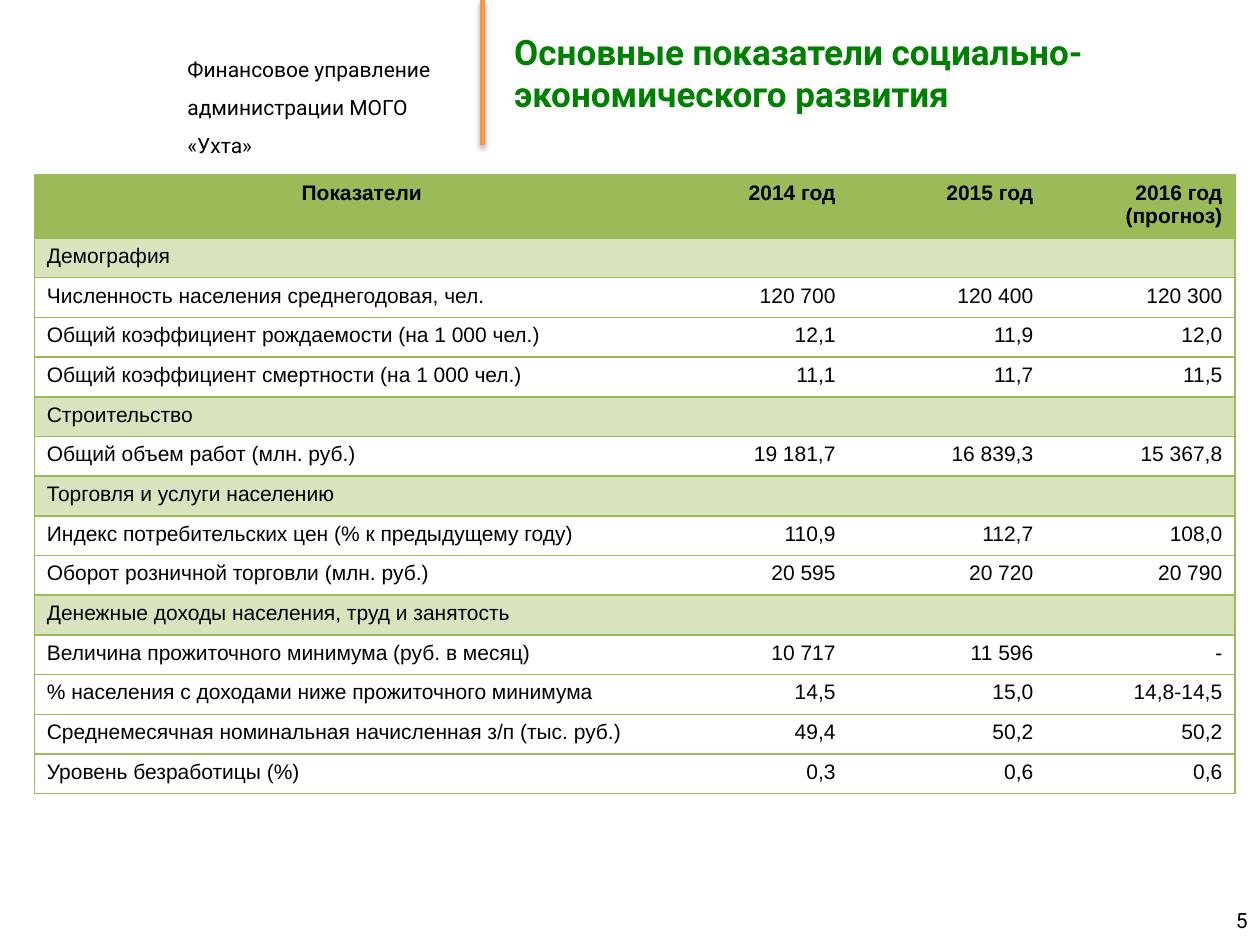
"""Slide with the main indicators of social and economic development."""
from lxml import etree
from pptx import Presentation
from pptx.dml.color import RGBColor
from pptx.enum.shapes import MSO_CONNECTOR
from pptx.enum.text import MSO_ANCHOR, PP_ALIGN
from pptx.oxml import parse_xml
from pptx.oxml.ns import qn
from pptx.util import Pt

LEFT, CENTER, RIGHT = PP_ALIGN.LEFT, PP_ALIGN.CENTER, PP_ALIGN.RIGHT
MIDDLE = MSO_ANCHOR.MIDDLE
STRAIGHT = MSO_CONNECTOR.STRAIGHT
NAMESPACE = "http://schemas.openxmlformats.org/drawingml/2006/main"
NO_STYLE = "{2D5ABB26-0587-4C30-8999-92F81FD0307C}"
GREEN, PALE_GREEN, WHITE = "9BBB59", "D7E4BD", "FFFFFF"
ROWS = [
    ("Показатели", "2014 год", "2015 год", "2016 год\n(прогноз)"),
    ("Демография",),
    ("Численность населения среднегодовая, чел.", "120 700", "120 400", "120 300"),
    ("Общий коэффициент рождаемости (на 1 000 чел.)", "12,1", "11,9", "12,0"),
    ("Общий коэффициент смертности (на 1 000 чел.)", "11,1", "11,7", "11,5"),
    ("Строительство",),
    ("Общий объем работ (млн. руб.)", "19 181,7", "16 839,3", "15 367,8"),
    ("Торговля и услуги населению",),
    ("Индекс потребительских цен (% к предыдущему году)", "110,9", "112,7", "108,0"),
    ("Оборот розничной торговли (млн. руб.)", "20 595", "20 720", "20 790"),
    ("Денежные доходы населения, труд и занятость",),
    ("Величина прожиточного минимума (руб. в месяц)", "10 717", "11 596", "-"),
    ("% населения с доходами ниже прожиточного минимума", "14,5", "15,0", "14,8-14,5"),
    ("Среднемесячная номинальная начисленная з/п (тыс. руб.)", "49,4", "50,2", "50,2"),
    ("Уровень безработицы (%)", "0,3", "0,6", "0,6"),
]
COLUMN_WIDTHS = [374.4, 90.7, 113, 108]
HEADER_HEIGHT, ROW_HEIGHT = 34, 22.7


def rgb(value):
    return RGBColor.from_string(value)


def write(frame, text, size=12, font="Roboto", color="000000", bold=False, align=LEFT, spacing=None):
    frame.text = text
    for paragraph in frame.paragraphs:
        paragraph.alignment = align
        paragraph.line_spacing = spacing
        paragraph.font.size = Pt(size)
        paragraph.font.name = font
        paragraph.font.bold = bold
        paragraph.font.color.rgb = rgb(color)


deck = Presentation()
deck.slide_width, deck.slide_height = Pt(720), Pt(540)
slide = deck.slides.add_slide(deck.slide_layouts[5])

department = slide.shapes.add_textbox(Pt(100), Pt(21.6), Pt(173), Pt(47.5)).text_frame
department.word_wrap = True
write(department, "Финансовое управление\nадминистрации МОГО «Ухта»", spacing=1.5)

divider = slide.shapes.add_connector(STRAIGHT, Pt(275.8), Pt(0), Pt(275.8), Pt(82.8))
divider.line.color.rgb = rgb("F79646")
divider.line.width = Pt(3)
divider.element.spPr.append(parse_xml(
    f'<a:effectLst xmlns:a="{NAMESPACE}"><a:outerShdw blurRad="{Pt(3.1)}" dist="{Pt(1.8)}" '
    'dir="5400000" rotWithShape="0"><a:srgbClr val="000000"><a:alpha val="35000"/>'
    '</a:srgbClr></a:outerShdw></a:effectLst>'))

title = slide.shapes.title
title.left, title.top, title.width, title.height = Pt(286.6), Pt(0), Pt(433.4), Pt(82.8)
title.text_frame.vertical_anchor = MIDDLE
write(title.text_frame, "Основные показатели социально-экономического развития",
      size=20, color="008000", bold=True)

page_number = slide.shapes.add_textbox(Pt(552), Pt(511.2), Pt(168), Pt(28.8)).text_frame
page_number.word_wrap = True
page_number.vertical_anchor = MIDDLE
write(page_number, "5", align=RIGHT)

table_height = HEADER_HEIGHT + ROW_HEIGHT * (len(ROWS) - 1)
indicators = slide.shapes.add_table(len(ROWS), len(COLUMN_WIDTHS), Pt(19.6), Pt(100),
                                    Pt(sum(COLUMN_WIDTHS)), Pt(table_height)).table
indicators.horz_banding = False
indicators._tbl.tblPr.find(qn("a:tableStyleId")).text = NO_STYLE
for column, width in zip(indicators.columns, COLUMN_WIDTHS):
    column.width = Pt(width)

last = len(COLUMN_WIDTHS) - 1
for r, values in enumerate(ROWS):
    header, section = r == 0, len(values) == 1
    indicators.rows[r].height = Pt(HEADER_HEIGHT if header else ROW_HEIGHT)
    background = GREEN if header else PALE_GREEN if section else WHITE
    if section:
        indicators.cell(r, 0).merge(indicators.cell(r, last))
    for c in range(last + 1):
        cell = indicators.cell(r, c)
        edges = ["lnL"] * (c == 0) + ["lnR"] * (c == last or section and c == 0) + ["lnT", "lnB"]
        for edge in edges:
            border = etree.SubElement(cell._tc.get_or_add_tcPr(), qn(f"a:{edge}"), w=str(Pt(1)))
            paint = etree.SubElement(border, qn("a:solidFill"))
            etree.SubElement(paint, qn("a:srgbClr"), val=GREEN)
        cell.fill.solid()
        cell.fill.fore_color.rgb = rgb(background)
        if c < len(values):
            align = RIGHT if c else CENTER if header else LEFT
            write(cell.text_frame, values[c], font="Arial", bold=header, align=align)

deck.save("out.pptx")
